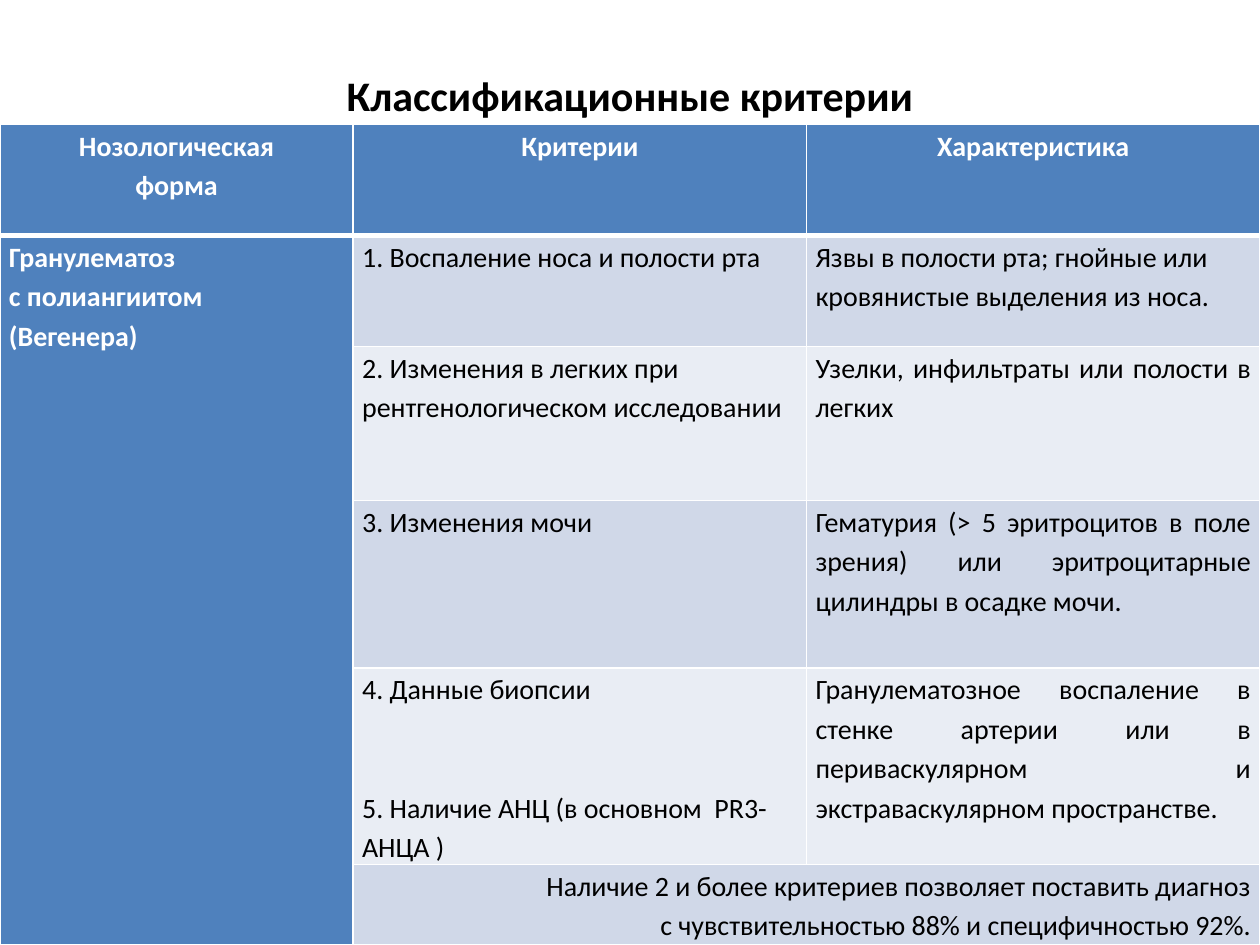
from dataclasses import dataclass

from lxml.etree import SubElement
from pptx import Presentation
from pptx.dml.color import RGBColor
from pptx.enum.text import MSO_ANCHOR as Anchor, PP_ALIGN as Align
from pptx.oxml.ns import qn
from pptx.util import Cm, Pt

FONT = "Calibri"
COLOURS = {
    "black": "000000",
    "white": "FFFFFF",
    "accent": "4F81BD",
    "band_dark": "D0D8E8",
    "band_light": "E9EDF4",
}
COLUMN_WIDTHS = (7.12, 9.14, 9.14)
ROW_HEIGHTS = (2.24, 2.24, 3.1, 3.38, 3.96, 1.62)
TABLE_TOP = 2.51


@dataclass
class CellText:
    row: int
    column: int
    text: str
    align: Align = Align.LEFT
    last_gap: float = 0  # points before the last paragraph


CELLS = [
    CellText(0, 0, "Нозологическая\nформа", Align.CENTER),
    CellText(0, 1, "Критерии", Align.CENTER),
    CellText(0, 2, "Характеристика", Align.CENTER),
    CellText(1, 0, "Гранулематоз\nс полиангиитом\n(Вегенера)"),
    CellText(1, 1, "1. Воспаление носа и полости рта"),
    CellText(1, 2, "Язвы в полости рта; гнойные или кровянистые выделения из носа."),
    CellText(2, 1, "2. Изменения в легких при рентгенологическом исследовании"),
    CellText(2, 2, "Узелки, инфильтраты или полости в легких", Align.JUSTIFY),
    CellText(3, 1, "3. Изменения мочи"),
    CellText(3, 2, "Гематурия (> 5 эритроцитов в поле зрения) или эритроцитарные "
             "цилиндры в осадке мочи.", Align.JUSTIFY),
    CellText(4, 1, "4. Данные биопсии\n5. Наличие АНЦ (в основном  PR3-АНЦА )", last_gap=45),
    CellText(4, 2, "Гранулематозное воспаление в стенке артерии или в периваскулярном "
             "и экстраваскулярном пространстве.", Align.JUSTIFY),
    CellText(5, 1, "Наличие 2 и более критериев позволяет поставить диагноз\n"
             "с чувствительностью 88% и специфичностью 92%.", Align.RIGHT),
]


def colour(name: str) -> RGBColor:
    return RGBColor.from_string(COLOURS[name])


def format_para(para, size: float, colour_name: str, bold: bool, align: Align) -> None:
    para.alignment = align
    for span in para.runs:
        span.font.name = FONT
        span.font.size = Pt(size)
        span.font.bold = bold
        span.font.color.rgb = colour(colour_name)


def add_title(page, text: str) -> None:
    box = page.shapes.add_textbox(Cm(1.27), Cm(0.76), Cm(22.86), Cm(3.18))
    frame = box.text_frame
    frame.word_wrap = True
    frame.vertical_anchor = Anchor.MIDDLE
    frame.margin_bottom = Cm(1)
    frame.text = text
    format_para(frame.paragraphs[0], 24, "black", True, Align.CENTER)


def set_borders(cell, widths: dict[str, float]) -> None:
    """Draw white borders; widths maps a side (L, R, T, B) to points."""
    properties = cell._tc.get_or_add_tcPr()
    for side, width in widths.items():
        line = SubElement(properties, qn(f"a:ln{side}"), w=str(Pt(width)))
        fill = SubElement(line, qn("a:solidFill"))
        SubElement(fill, qn("a:srgbClr"), val=COLOURS["white"])


def style_cell(cell, row: int, column: int) -> None:
    set_borders(cell, {"L": 1, "R": 1, "T": 3 if row == 1 else 1, "B": 3 if row == 0 else 1})
    band = "band_dark" if row % 2 else "band_light"
    cell.fill.solid()
    cell.fill.fore_color.rgb = colour("accent" if row == 0 or column == 0 else band)
    cell.margin_left = cell.margin_right = Cm(0.18)
    cell.margin_top = cell.margin_bottom = 0


def fill_cell(cell, content: CellText) -> None:
    heading = content.row == 0 or content.column == 0
    cell.text_frame.text = content.text
    paras = cell.text_frame.paragraphs
    for para in paras:
        para.line_spacing = 1.15
        format_para(para, 16, "white" if heading else "black", heading, content.align)
    if content.last_gap:
        paras[-1].space_before = Pt(content.last_gap)


def add_criteria_table(page) -> None:
    frame = page.shapes.add_table(
        len(ROW_HEIGHTS), len(COLUMN_WIDTHS),
        0, Cm(TABLE_TOP), Cm(sum(COLUMN_WIDTHS)), Cm(sum(ROW_HEIGHTS)),
    )
    table = frame.table
    table.first_row = table.horz_banding = False
    for column, width in zip(table.columns, COLUMN_WIDTHS):
        column.width = Cm(width)
    for row, height in zip(table.rows, ROW_HEIGHTS):
        row.height = Cm(height)
    for row in range(len(ROW_HEIGHTS)):
        for column in range(len(COLUMN_WIDTHS)):
            style_cell(table.cell(row, column), row, column)
    table.cell(1, 0).merge(table.cell(5, 0))
    table.cell(5, 1).merge(table.cell(5, 2))
    for content in CELLS:
        fill_cell(table.cell(content.row, content.column), content)


def main() -> None:
    deck = Presentation()
    deck.slide_width, deck.slide_height = Cm(25.4), Cm(19.05)
    page = deck.slides.add_slide(deck.slide_layouts[6])
    add_title(page, "Классификационные критерии")
    add_criteria_table(page)
    deck.save("out.pptx")


if __name__ == "__main__":
    main()
